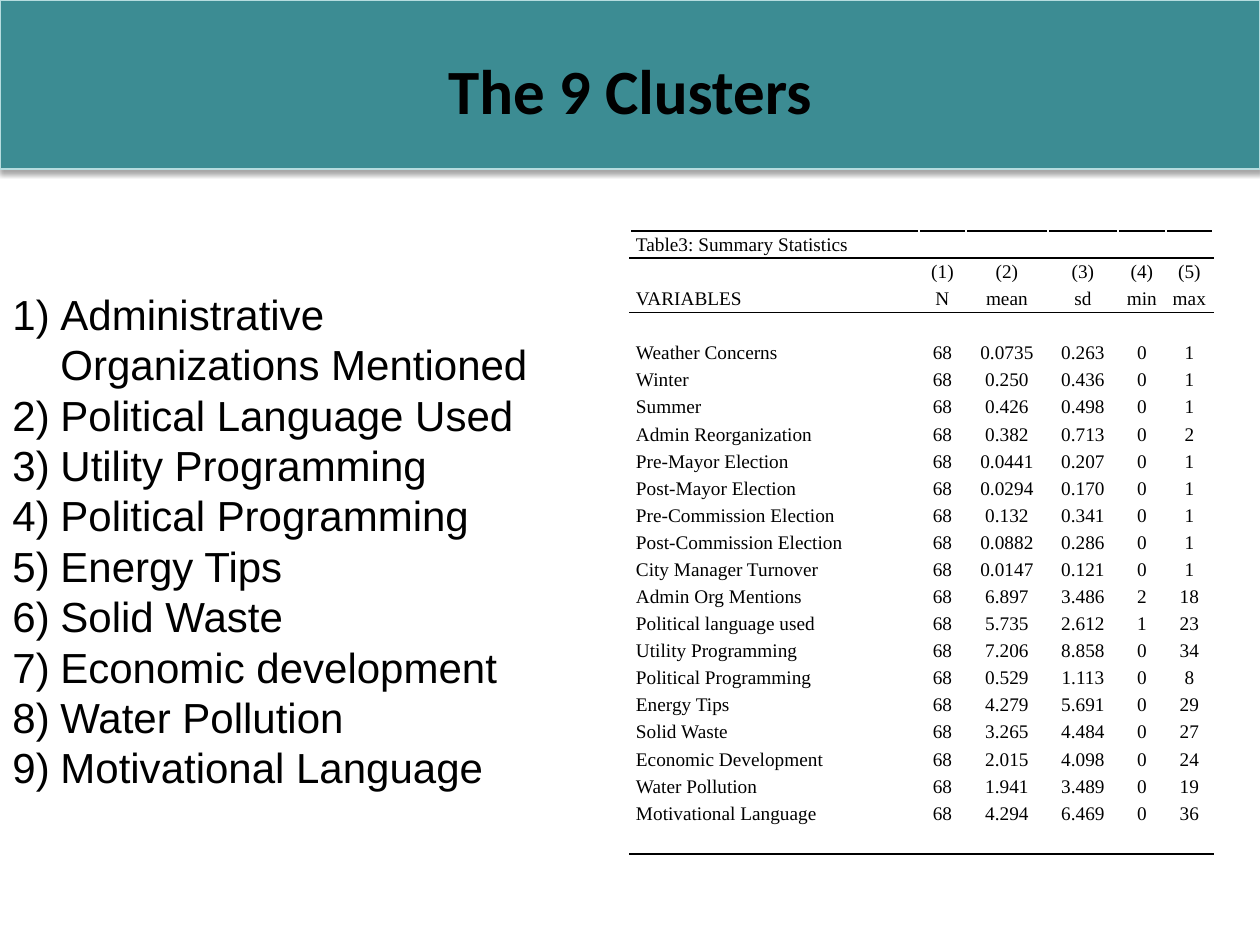
"""Builds the slide that lists nine clusters beside their summary statistics."""
import pptx
import pptx.dml.color
import pptx.enum.shapes
import pptx.enum.text
import pptx.oxml.ns
import pptx.util
from lxml import etree

SCALE = 914400 / 126
BLACK = "000000"
ALIGN = pptx.enum.text.PP_ALIGN

CLUSTERS = [
    "Administrative Organizations Mentioned", "Political Language Used",
    "Utility Programming", "Political Programming", "Energy Tips",
    "Solid Waste", "Economic development", "Water Pollution",
    "Motivational Language",
]
WIDTHS = [289, 47, 82, 70, 48, 47]
STATS = [
    ("Weather Concerns", "0.0735", "0.263", "0", "1"),
    ("Winter", "0.250", "0.436", "0", "1"),
    ("Summer", "0.426", "0.498", "0", "1"),
    ("Admin Reorganization", "0.382", "0.713", "0", "2"),
    ("Pre-Mayor Election", "0.0441", "0.207", "0", "1"),
    ("Post-Mayor Election", "0.0294", "0.170", "0", "1"),
    ("Pre-Commission Election", "0.132", "0.341", "0", "1"),
    ("Post-Commission Election", "0.0882", "0.286", "0", "1"),
    ("City Manager Turnover", "0.0147", "0.121", "0", "1"),
    ("Admin Org Mentions", "6.897", "3.486", "2", "18"),
    ("Political language used", "5.735", "2.612", "1", "23"),
    ("Utility Programming", "7.206", "8.858", "0", "34"),
    ("Political Programming", "0.529", "1.113", "0", "8"),
    ("Energy Tips", "4.279", "5.691", "0", "29"),
    ("Solid Waste", "3.265", "4.484", "0", "27"),
    ("Economic Development", "2.015", "4.098", "0", "24"),
    ("Water Pollution", "1.941", "3.489", "0", "19"),
    ("Motivational Language", "4.294", "6.469", "0", "36"),
]
BLANK = ("",) * len(WIDTHS)
ROWS = [
    ("Table3: Summary Statistics",) + BLANK[1:],
    ("", "(1)", "(2)", "(3)", "(4)", "(5)"),
    ("VARIABLES", "N", "mean", "sd", "min", "max"),
    BLANK,
    *[(name, "68", *rest) for name, *rest in STATS],
    BLANK,
]
RULES = {0, 1, 3, len(ROWS)}


def px(size):
    """Turn pixels into EMU."""
    return pptx.util.Emu(round(size * SCALE))


def color(text):
    """Turn a hex string into a colour."""
    return pptx.dml.color.RGBColor.from_string(text)


def node(parent, tag, **attrs):
    """Add a drawing element to a parent."""
    return etree.SubElement(parent, pptx.oxml.ns.qn(tag), attrs)


def style(para, face, size, bold=False):
    """Set the font of a paragraph."""
    font = para.font
    font.name, font.size, font.bold = face, pptx.util.Pt(size), bold
    font.color.rgb = color(BLACK)


def add_banner(slide):
    """Draw the shadowed band behind the title."""
    kind = pptx.enum.shapes.MSO_SHAPE.RECTANGLE
    band = slide.shapes.add_shape(kind, 0, 0, px(1260), px(169))
    band.fill.solid()
    band.fill.fore_color.rgb = color("3C8C93")
    band.line.color.rgb = color("B6DCDF")
    band.line.width = pptx.util.Pt(0.75)
    band.shadow.inherit = False
    glow = band.element.spPr.find(pptx.oxml.ns.qn("a:effectLst"))
    cast = node(glow, "a:outerShdw", blurRad="40000", dist="23000",
                dir="5400000", rotWithShape="0")
    node(node(cast, "a:srgbClr", val=BLACK), "a:alpha", val="35000")
    slide.shapes.title.element.addprevious(band.element)


def set_title(slide, text):
    """Place and format the title."""
    title = slide.shapes.title
    title.left, title.top = px(63), px(10)
    title.width, title.height = px(1134), px(158)
    frame = title.text_frame
    frame.text = text
    frame.vertical_anchor = pptx.enum.text.MSO_ANCHOR.MIDDLE
    para = frame.paragraphs[0]
    para.alignment = ALIGN.CENTER
    style(para, "Calibri", 36, True)


def add_list(slide, items):
    """Write the numbered list."""
    box = slide.shapes.add_textbox(0, px(282), px(598), px(522))
    frame = box.text_frame
    frame.word_wrap = True
    frame.text = "\n".join(items)
    for para in frame.paragraphs:
        props = para._p.get_or_add_pPr()
        props.set("marL", str(px(48)))
        props.set("indent", str(px(-48)))
        node(props, "a:buFont", typeface="+mj-lt")
        node(props, "a:buAutoNum", type="arabicParenR")
        style(para, "Arial", 24)


def add_rule(cell, side):
    """Draw a black border on one side of a cell."""
    line = node(cell._tc.get_or_add_tcPr(), side, w="12700")
    node(node(line, "a:solidFill"), "a:srgbClr", val=BLACK)


def fill_cell(cell, text, row, col):
    """Write and format one table cell."""
    cell.text = text
    cell.margin_left = cell.margin_right = px(6)
    cell.margin_top = cell.margin_bottom = 0
    para = cell.text_frame.paragraphs[0]
    para.alignment = ALIGN.CENTER if col else ALIGN.LEFT
    para.line_spacing = 1.15
    style(para, "Times New Roman", 11)
    if not text:
        node(para._p, "a:endParaRPr", sz="1100")
    for edge, side in ((row, "a:lnT"), (row + 1, "a:lnB")):
        if edge in RULES:
            add_rule(cell, side)
    cell.fill.background()


def add_stats(slide):
    """Build the summary table."""
    frame = slide.shapes.add_table(len(ROWS), len(WIDTHS), px(630), px(231),
                                   px(sum(WIDTHS)), px(624))
    table = frame.table
    table.first_row = table.horz_banding = False
    for col, width in enumerate(WIDTHS):
        table.columns[col].width = px(width)
    for row, texts in enumerate(ROWS):
        for col, text in enumerate(texts):
            fill_cell(table.cell(row, col), text, row, col)


def main():
    """Build and save the slide."""
    deck = pptx.Presentation()
    deck.slide_width, deck.slide_height = px(1260), px(945)
    slide = deck.slides.add_slide(deck.slide_layouts[5])
    add_banner(slide)
    set_title(slide, "The 9 Clusters")
    add_stats(slide)
    add_list(slide, CLUSTERS)
    deck.save("out.pptx")


if __name__ == "__main__":
    main()
